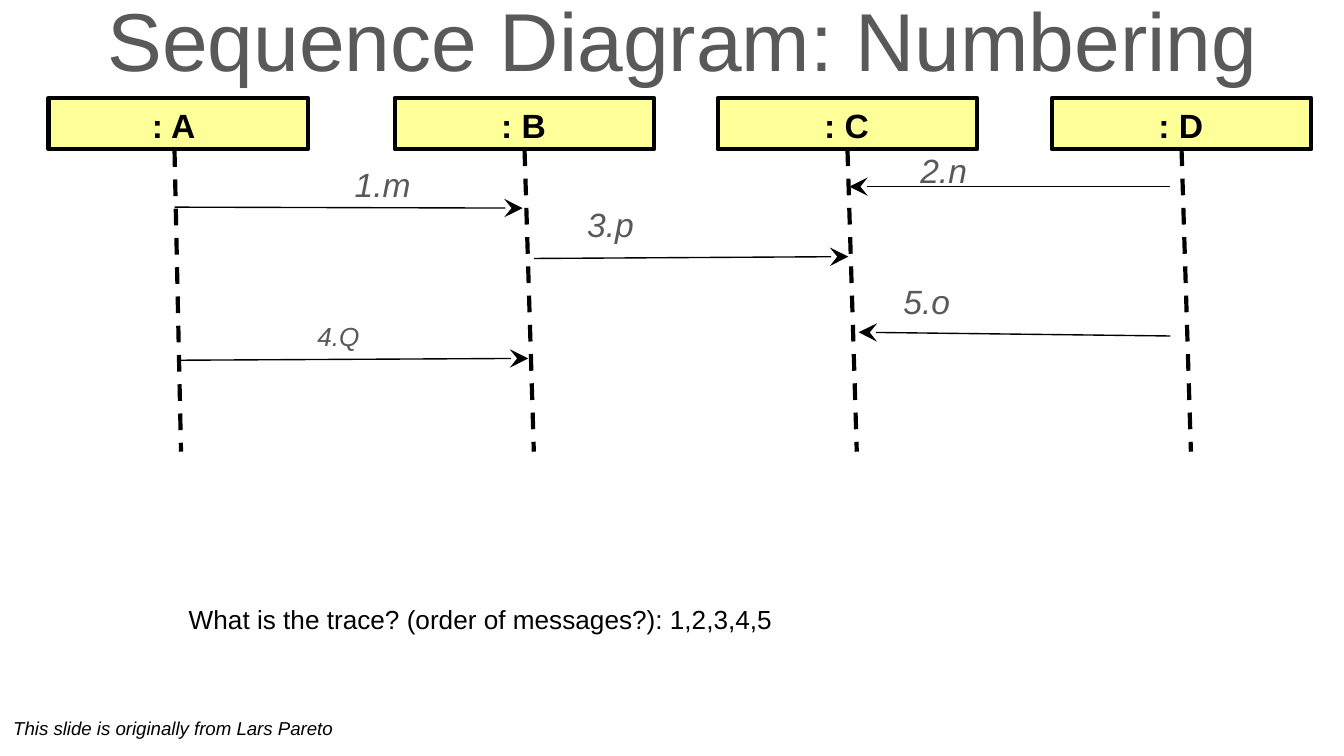
from pptx import Presentation
from pptx.dml.color import RGBColor
from pptx.enum import dml, shapes, text
from pptx.oxml import ns
from pptx.util import Pt
from lxml import etree

BLACK = RGBColor(0, 0, 0)
GRAY = RGBColor(0x59, 0x59, 0x59)
YELLOW = RGBColor(0xFF, 0xFF, 0x99)


class Board:
    font = "Arial"
    thick = 2.25
    thin = 0.75

    def __init__(self, slide):
        self.slide = slide

    def label(self, words, x, y, w, h, size, color=BLACK, bold=False,
              italic=False, inset=(0, 0), align=text.PP_ALIGN.LEFT,
              anchor=text.MSO_ANCHOR.TOP):
        frame = self.slide.shapes.add_textbox(Pt(x), Pt(y), Pt(w), Pt(h)).text_frame
        frame.word_wrap = True
        frame.vertical_anchor = anchor
        frame.margin_left = frame.margin_right = Pt(inset[0])
        frame.margin_top = frame.margin_bottom = Pt(inset[1])
        frame.text = words
        para = frame.paragraphs[0]
        para.alignment = align
        for run in para.runs:
            font = run.font
            font.name, font.size = self.font, Pt(size)
            font.bold, font.italic = bold, italic
            font.color.rgb = color

    def box(self, x, y, w, h):
        rect = self.slide.shapes.add_shape(
            shapes.MSO_SHAPE.RECTANGLE, Pt(x), Pt(y), Pt(w), Pt(h))
        rect.shadow.inherit = False
        rect.fill.solid()
        rect.fill.fore_color.rgb = YELLOW
        rect.line.color.rgb = BLACK
        rect.line.width = Pt(self.thick)
        return rect

    def line(self, x1, y1, x2, y2, width):
        link = self.slide.shapes.add_connector(
            shapes.MSO_CONNECTOR.STRAIGHT, Pt(x1), Pt(y1), Pt(x2), Pt(y2))
        link.line.color.rgb = BLACK
        link.line.width = Pt(width)
        etree.SubElement(link._element.spPr, ns.qn("a:effectLst"))
        return link

    def life(self, name, left, top, end):
        rect = self.box(left, 52.5, 139, 27.5)
        link = self.line(top, 80.5, end, 242, self.thick)
        link.line.dash_style = dml.MSO_LINE.DASH
        if abs(left + 139 / 2 - top) < 1:
            link.begin_connect(rect, 2)
        self.label(name, top - 14, 56, 27, 18, 18, bold=True,
                   align=text.PP_ALIGN.CENTER)

    def call(self, words, x, y, size, start, end):
        link = self.line(*start, *end, self.thin)
        etree.SubElement(link._element.spPr.find(ns.qn("a:ln")),
                         ns.qn("a:tailEnd"), type="stealth", w="lg", len="lg")
        self.label(words, x, y, 90, 21.5, size, GRAY, italic=True)


def main():
    deck = Presentation()
    deck.slide_width, deck.slide_height = Pt(720), Pt(405)
    board = Board(deck.slides.add_slide(deck.slide_layouts[6]))

    board.label("Sequence Diagram: Numbering", 6, -13, 720, 67.5, 44, GRAY,
                inset=(7.2, 3.6), align=text.PP_ALIGN.CENTER,
                anchor=text.MSO_ANCHOR.MIDDLE)

    for name, left, top, end in (
        (": A", 26, 93.5, 97),
        (": B", 211.5, 281, 286),
        (": C", 384.5, 454, 459),
        (": D", 563.5, 633, 638),
    ):
        board.life(name, left, top, end)

    for call in (
        ("1.m", 190, 88, 18, (93.5, 111), (280, 111.5)),
        ("2.n", 493, 80.5, 18, (627, 100), (455, 100)),
        ("3.p", 314.5, 109.5, 18, (286, 138.5), (454.5, 137.5)),
        ("4.Q", 170, 171.5, 14, (96.5, 193), (283, 192)),
        ("5.o", 484, 150.5, 18, (627, 180), (460, 178)),
    ):
        board.call(*call)

    board.label("What is the trace? (order of messages?): 1,2,3,4,5",
                94, 316, 381, 44.5, 14, inset=(7.2, 7.2))
    board.label("This slide is originally from Lars Pareto",
                0, 378, 255.5, 34.5, 10, italic=True, inset=(7.2, 7.2))
    deck.save("out.pptx")


if __name__ == "__main__":
    main()
